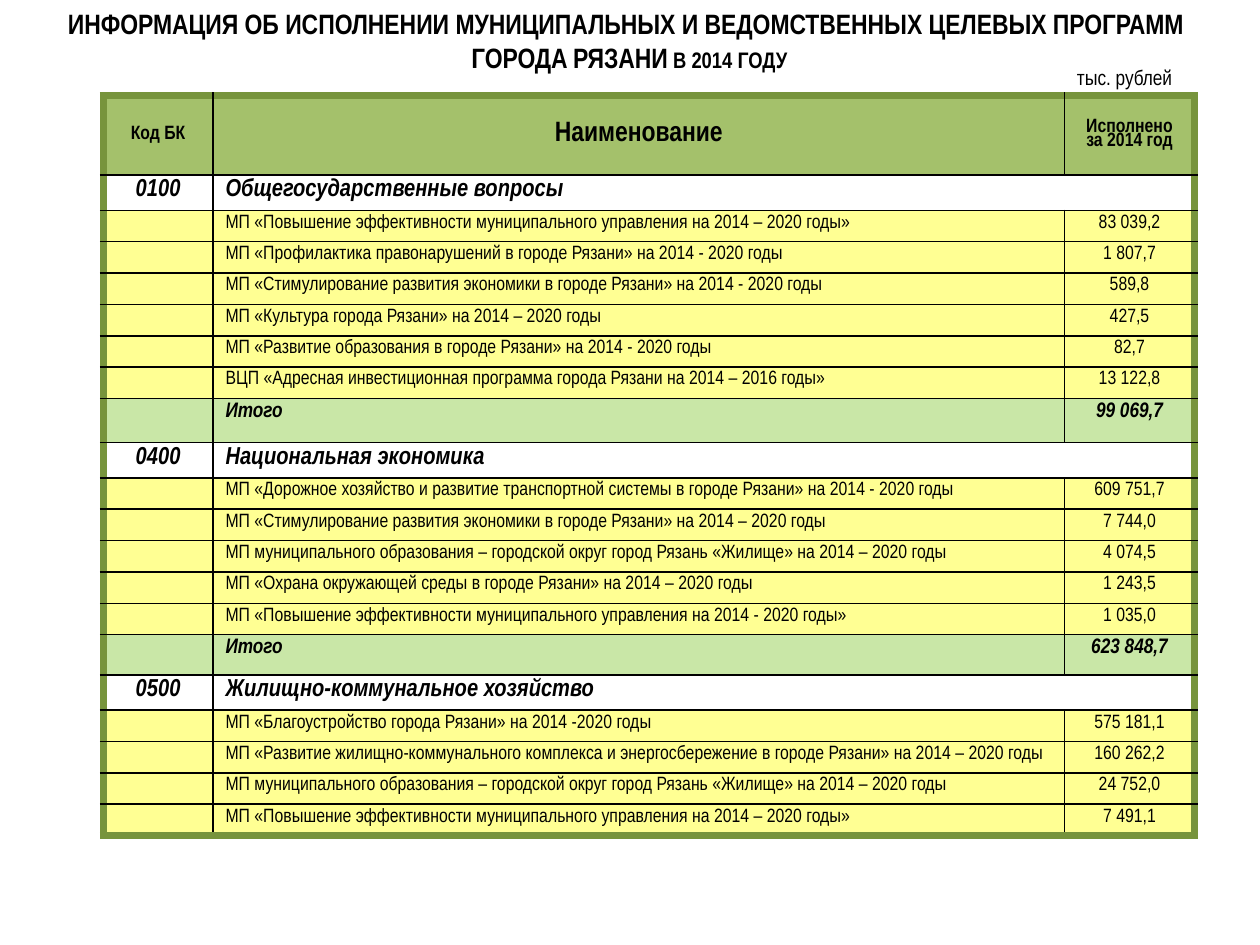
from lxml.etree import SubElement
from pptx import Presentation
from pptx.dml.color import RGBColor
from pptx.enum.text import MSO_ANCHOR, PP_ALIGN
from pptx.oxml.ns import qn
from pptx.util import Inches, Pt

FONT = "Arial Narrow"
BLACK = RGBColor(0x00, 0x00, 0x00)
WHITE = RGBColor(0xFF, 0xFF, 0xFF)
FRAME_GREEN = RGBColor(0x77, 0x94, 0x3C)
HEADER_GREEN = RGBColor(0xA4, 0xC1, 0x6B)
TOTAL_GREEN = RGBColor(0xC9, 0xE7, 0xA7)
ITEM_YELLOW = RGBColor(0xFF, 0xFF, 0x93)

COLUMN_WIDTHS = (0.87, 6.76, 1.03)
HEADER_HEIGHT, SECTION_HEIGHT, ITEM_HEIGHT = 0.63, 0.28, 0.24

# Code, section name, programmes, total, height of the total row
SECTIONS = [
    ("0100", "Общегосударственные вопросы", [
        ("МП «Повышение эффективности муниципального управления на 2014 – 2020 годы»", "83 039,2"),
        ("МП «Профилактика правонарушений в городе Рязани» на 2014 - 2020 годы", "1 807,7"),
        ("МП «Стимулирование развития экономики в городе Рязани» на 2014 - 2020 годы", "589,8"),
        ("МП «Культура города Рязани» на 2014 – 2020 годы", "427,5"),
        ("МП «Развитие образования в городе Рязани» на 2014 - 2020 годы", "82,7"),
        ("ВЦП «Адресная инвестиционная программа города Рязани на 2014 – 2016 годы»", "13 122,8"),
    ], "99 069,7", 0.35),
    ("0400", "Национальная экономика", [
        ("МП «Дорожное хозяйство и развитие транспортной системы в городе Рязани» на 2014 - 2020 годы",
         "609 751,7"),
        ("МП «Стимулирование развития экономики в городе Рязани» на 2014 – 2020 годы", "7 744,0"),
        ("МП муниципального образования – городской округ город Рязань «Жилище» на 2014 – 2020 годы",
         "4 074,5"),
        ("МП «Охрана окружающей среды в городе Рязани» на 2014 – 2020 годы", "1 243,5"),
        ("МП «Повышение эффективности муниципального управления на 2014 - 2020 годы»", "1 035,0"),
    ], "623 848,7", 0.32),
    ("0500", "Жилищно-коммунальное хозяйство", [
        ("МП «Благоустройство города Рязани» на 2014 -2020 годы", "575 181,1"),
        ("МП «Развитие жилищно-коммунального комплекса и энергосбережение в городе Рязани» "
         "на 2014 – 2020 годы", "160 262,2"),
        ("МП муниципального образования – городской округ город Рязань «Жилище» на 2014 – 2020 годы",
         "24 752,0"),
        ("МП «Повышение эффективности муниципального управления на 2014 – 2020 годы»", "7 491,1"),
    ], None, None),
]


def table_rows():
    """Return (kind, height, three texts) for every row."""
    rows = [("header", HEADER_HEIGHT, ("Код БК", "Наименование", "Исполнено\nза 2014 год"))]
    for code, name, programmes, total, total_height in SECTIONS:
        rows.append(("section", SECTION_HEIGHT, (code, name, "")))
        rows += [("item", ITEM_HEIGHT, ("", *programme)) for programme in programmes]
        if total:
            rows.append(("total", total_height, ("", "Итого", total)))
    return rows


class BudgetSlide:
    # Fill, text size, bold, italic
    ROW_STYLES = {
        "header": (HEADER_GREEN, 11, True, False),
        "section": (WHITE, 14, True, True),
        "item": (ITEM_YELLOW, 11, False, False),
        "total": (TOTAL_GREEN, 12, True, True),
    }

    def __init__(self, presentation):
        self.slide = presentation.slides.add_slide(presentation.slide_layouts[5])

    def add_run(self, paragraph, text, size, bold=False, italic=False):
        run = paragraph.add_run()
        run.text = text
        font = run.font
        font.name, font.size, font.bold, font.italic = FONT, Pt(size), bold, italic
        font.color.rgb = BLACK
        return run

    def title(self, lines, small_caps):
        title = self.slide.shapes.title
        title.left, title.top, title.width, title.height = Inches(0), Inches(0), Inches(9.99), Inches(0.64)
        frame = title.text_frame
        frame.word_wrap = True
        frame.vertical_anchor = MSO_ANCHOR.MIDDLE
        paragraph = frame.paragraphs[0]
        paragraph.alignment = PP_ALIGN.CENTER
        self.add_run(paragraph, lines[0], 16, bold=True)
        paragraph.add_line_break()
        for text in (lines[1], small_caps):
            run = self.add_run(paragraph, text, 16, bold=True)
            run._r.get_or_add_rPr().set("cap", "small")

    def caption(self, text, left, top, width, height):
        box = self.slide.shapes.add_textbox(Inches(left), Inches(top), Inches(width), Inches(height))
        frame = box.text_frame
        frame.word_wrap = True
        frame.vertical_anchor = MSO_ANCHOR.MIDDLE
        frame.paragraphs[0].alignment = PP_ALIGN.CENTER
        self.add_run(frame.paragraphs[0], text, 12)

    def borders(self, cell, framed_sides):
        properties = cell._tc.get_or_add_tcPr()
        for side in "LRTB":
            framed = side in framed_sides
            line = SubElement(properties, qn(f"a:ln{side}"), w=str(Pt(4.5 if framed else 1)))
            color = SubElement(SubElement(line, qn("a:solidFill")), qn("a:srgbClr"))
            color.set("val", str(FRAME_GREEN if framed else BLACK))

    def cell_text(self, cell, text, size, bold, italic, centered, spacing):
        frame = cell.text_frame
        for index, line in enumerate(text.split("\n")):
            paragraph = frame.paragraphs[0] if index == 0 else frame.add_paragraph()
            paragraph.alignment = PP_ALIGN.CENTER if centered else PP_ALIGN.LEFT
            paragraph.line_spacing = spacing
            if line:
                self.add_run(paragraph, line, size, bold, italic)
            else:
                # Keeps an empty cell from stretching its row
                SubElement(paragraph._p, qn("a:endParaRPr"), sz=str(size * 100))

    def table(self, rows, left, top):
        frame = self.slide.shapes.add_table(
            len(rows), len(COLUMN_WIDTHS), Inches(left), Inches(top),
            Inches(sum(COLUMN_WIDTHS)), Inches(sum(height for _, height, _ in rows)))
        table = frame.table
        table.first_row = table.horz_banding = False
        for column, width in zip(table.columns, COLUMN_WIDTHS):
            column.width = Inches(width)
        for row_index, (kind, height, texts) in enumerate(rows):
            table.rows[row_index].height = Inches(height)
            fill, size, bold, italic = self.ROW_STYLES[kind]
            header = kind == "header"
            vertical_frame = "T" if header else "B" if row_index == len(rows) - 1 else ""
            for column_index, text in enumerate(texts):
                cell = table.cell(row_index, column_index)
                spans_to_edge = kind == "section" and column_index == 1
                side_frame = ("L", "R" if spans_to_edge else "", "R")[column_index]
                self.borders(cell, vertical_frame + side_frame)
                cell.fill.solid()
                cell.fill.fore_color.rgb = fill
                cell.margin_top = cell.margin_bottom = Inches(0.03)
                cell.vertical_anchor = MSO_ANCHOR.MIDDLE if header else MSO_ANCHOR.TOP
                text_size = 16 if header and column_index == 1 else size
                self.cell_text(cell, text, text_size, bold, italic,
                               header or column_index != 1, 0.8 if header else 1.0)
            if kind == "section":
                table.cell(row_index, 1).merge(table.cell(row_index, 2))


def main():
    presentation = Presentation()
    presentation.slide_width, presentation.slide_height = Inches(10), Inches(7.5)
    budget = BudgetSlide(presentation)
    budget.title(("ИНФОРМАЦИЯ ОБ ИСПОЛНЕНИИ МУНИЦИПАЛЬНЫХ И ВЕДОМСТВЕННЫХ ЦЕЛЕВЫХ ПРОГРАММ ",
                  "ГОРОДА РЯЗАНИ "), "в 2014 году")
    budget.table(table_rows(), 0.82, 0.76)
    budget.caption("тыс. рублей", 8.15, 0.44, 1.55, 0.35)
    presentation.save("out.pptx")


if __name__ == "__main__":
    main()
